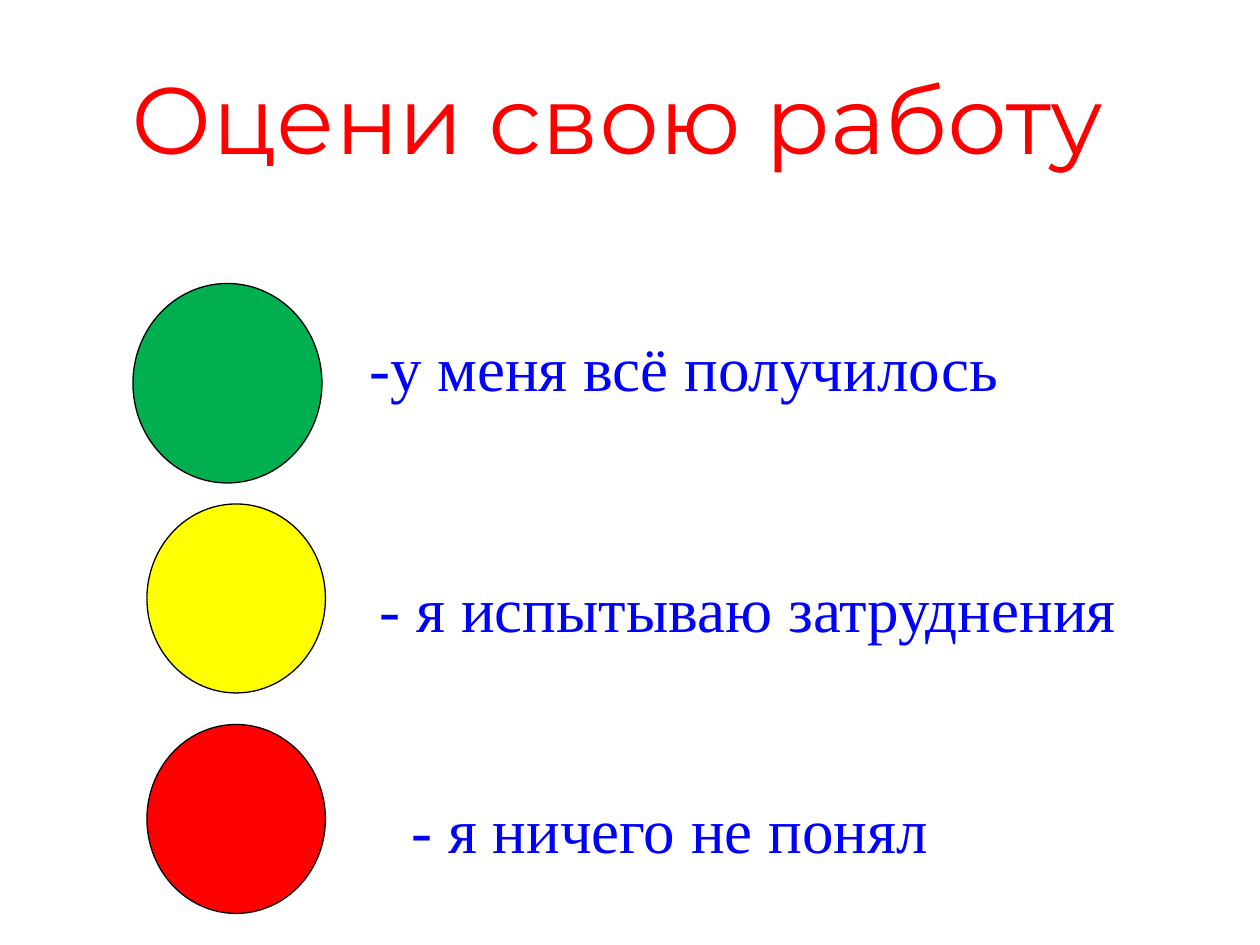
from pptx import Presentation
from pptx.dml.color import RGBColor
from pptx.enum.shapes import MSO_SHAPE
from pptx.enum.text import MSO_ANCHOR, PP_ALIGN
from pptx.util import Pt

HUES = {"red": "FF0000", "green": "00B050", "yellow": "FFFF00",
        "blue": "0000FF", "black": "000000"}

# Each row: light colour, light box, label, label box (points)
ROWS = [
    ("green", (76, 162, 108, 114), "-у меня всё получилось", (204, 180, 426, 41)),
    ("yellow", (84, 288, 102, 108), "- я испытываю затруднения", (210, 318, 438, 41)),
    ("red", (84, 414, 102, 108), "- я ничего не понял", (228, 444, 408, 30)),
]


def tint(name):
    return RGBColor.from_string(HUES[name])


def write(frame, text, size, font, hue, align=PP_ALIGN.LEFT, anchor=MSO_ANCHOR.TOP):
    frame.word_wrap = True
    frame.vertical_anchor = anchor
    para = frame.paragraphs[0]
    para.alignment = align
    run = para.add_run()
    run.text = text
    run.font.size = Pt(size)
    run.font.name = font
    run.font.color.rgb = tint(hue)


def head(slide, text, box):
    title = slide.shapes.title
    title.left, title.top, title.width, title.height = map(Pt, box)
    write(title.text_frame, text, size=54, font="Montserrat", hue="red",
          align=PP_ALIGN.CENTER, anchor=MSO_ANCHOR.MIDDLE)


def light(slide, hue, box):
    disc = slide.shapes.add_shape(MSO_SHAPE.OVAL, *map(Pt, box))
    disc.shadow.inherit = False
    disc.fill.solid()
    disc.fill.fore_color.rgb = tint(hue)
    disc.line.color.rgb = tint("black")
    disc.line.width = Pt(0.75)


def label(slide, text, box):
    frame = slide.shapes.add_textbox(*map(Pt, box)).text_frame
    frame.margin_top = Pt(7.6)
    frame.margin_right = 0
    write(frame, text, size=36, font="Times New Roman", hue="blue")


def main():
    deck = Presentation()
    deck.slide_width, deck.slide_height = Pt(720), Pt(540)
    slide = deck.slides.add_slide(deck.slide_layouts[5])

    # Title
    head(slide, "Оцени свою работу ", (36, 21.6, 648, 90))

    # Traffic lights with their meanings
    for hue, spot, text, box in ROWS:
        light(slide, hue, spot)
        label(slide, text, box)

    deck.save("out.pptx")


if __name__ == "__main__":
    main()
